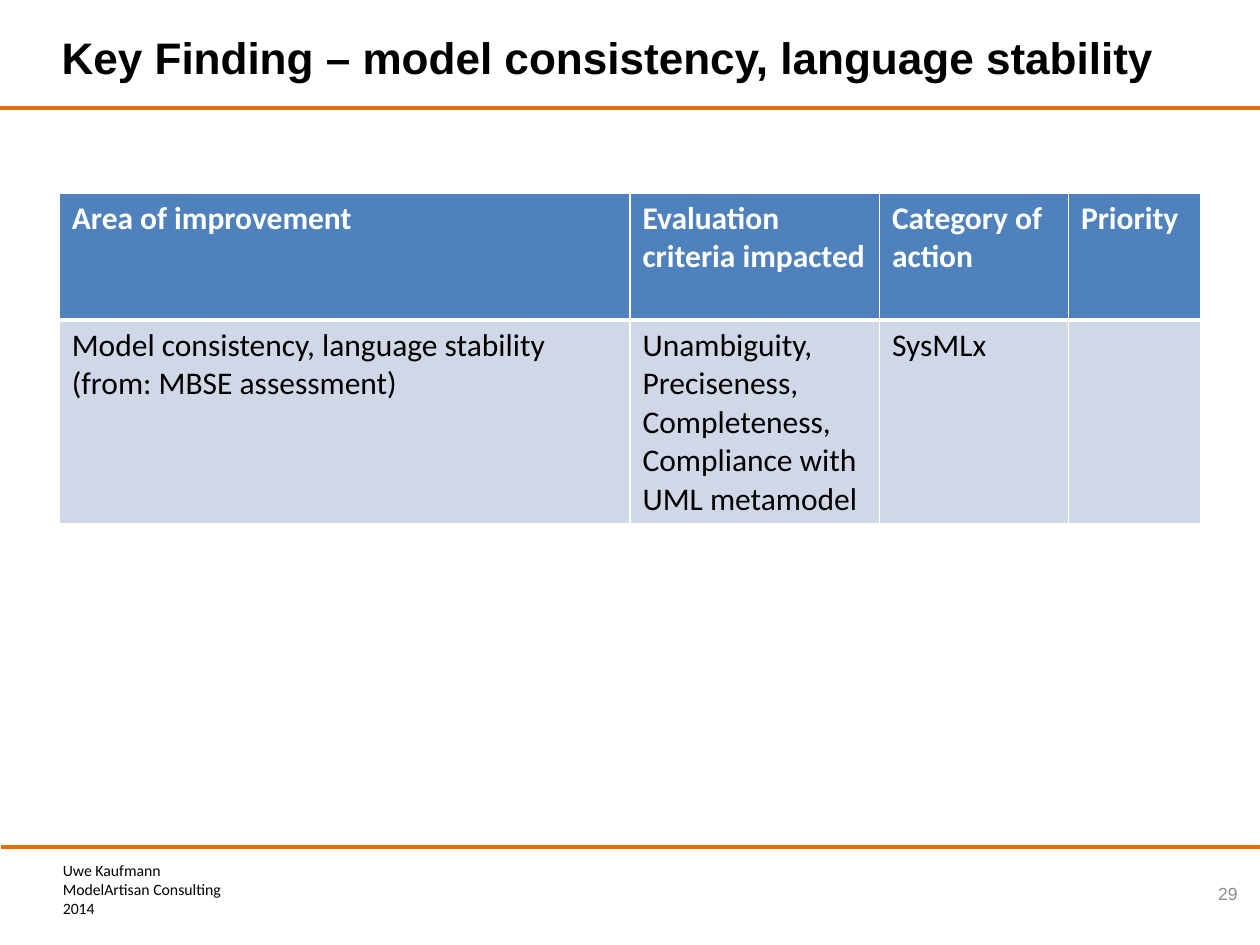
from dataclasses import dataclass

from lxml.etree import SubElement
from pptx import Presentation
from pptx.dml.color import RGBColor
from pptx.enum.shapes import MSO_CONNECTOR
from pptx.enum.text import MSO_ANCHOR, PP_ALIGN
from pptx.oxml.ns import qn
from pptx.util import Inches, Pt

# Content
TITLE = "Key Finding – model consistency, language stability"
FOOTER = ["Uwe Kaufmann", "ModelArtisan Consulting", "2014"]
PAGE_NUMBER = "29"
TABLE_ROWS = [
    ["Area of improvement", "Evaluation criteria impacted", "Category of action", "Priority"],
    [
        "Model consistency, language stability (from: MBSE assessment)",
        "Unambiguity, Preciseness, Completeness, Compliance with UML metamodel",
        "SysMLx",
        "",
    ],
]

# Layout in inches
SLIDE_WIDTH, SLIDE_HEIGHT = 10, 7.5
TABLE_LEFT, TABLE_TOP = 0.47, 1.53
COLUMN_WIDTHS = [4.53, 1.98, 1.5, 1.05]
ROW_HEIGHTS = [1.01, 1.62]
RULES = [(0, 0.86), (0.01, 6.72)]  # left end, height on the slide


@dataclass(frozen=True)
class Theme:
    heading_font: str = "Arial"
    body_font: str = "Calibri"
    title_size: float = 25.2
    table_size: float = 18
    footer_size: float = 9
    number_size: float = 10
    rule_width: float = 2.25
    black: str = "000000"
    white: str = "FFFFFF"
    grey: str = "8C8C8C"
    orange: str = "E46C0A"
    header_fill: str = "4F81BD"
    body_fill: str = "D0D8E8"


THEME = Theme()


def write_text(frame, lines, *, size, font=THEME.body_font, color=THEME.black,
               bold=False, align=PP_ALIGN.LEFT):
    for index, line in enumerate(lines):
        paragraph = frame.paragraphs[0] if index == 0 else frame.add_paragraph()
        paragraph.alignment = align
        run = paragraph.add_run()
        run.text = line
        run.font.name = font
        run.font.size = Pt(size)
        run.font.bold = bold
        run.font.color.rgb = RGBColor.from_string(color)


def add_text_box(slide, box, lines, *, wrap=True, anchor=MSO_ANCHOR.MIDDLE, **text_format):
    frame = slide.shapes.add_textbox(*map(Inches, box)).text_frame
    frame.word_wrap = wrap
    frame.vertical_anchor = anchor
    write_text(frame, lines, **text_format)


def add_rule(slide, left, top):
    connector = slide.shapes.add_connector(
        MSO_CONNECTOR.STRAIGHT, Inches(left), Inches(top), Inches(SLIDE_WIDTH), Inches(top))
    connector.line.color.rgb = RGBColor.from_string(THEME.orange)
    connector.line.width = Pt(THEME.rule_width)
    SubElement(connector.element.spPr, qn("a:effectLst"))


def set_cell_style(cell, fill, border_widths):
    cell.fill.solid()
    cell.fill.fore_color.rgb = RGBColor.from_string(fill)
    properties = cell._tc.get_or_add_tcPr()
    for index, (side, width) in enumerate(border_widths.items()):
        border = SubElement(properties, qn(f"a:ln{side}"), w=str(Pt(width)))
        SubElement(SubElement(border, qn("a:solidFill")), qn("a:srgbClr"), val=THEME.white)
        properties.insert(index, border)  # borders come before the fill


def add_findings_table(slide):
    table = slide.shapes.add_table(
        len(TABLE_ROWS), len(COLUMN_WIDTHS), Inches(TABLE_LEFT), Inches(TABLE_TOP),
        Inches(sum(COLUMN_WIDTHS)), Inches(sum(ROW_HEIGHTS))).table
    table.horz_banding = False
    for column, width in zip(table.columns, COLUMN_WIDTHS):
        column.width = Inches(width)
    for row_index, (row, height) in enumerate(zip(table.rows, ROW_HEIGHTS)):
        row.height = Inches(height)
        header = row_index == 0
        borders = {"L": 1, "R": 1, "T": 1 if header else 3, "B": 3 if header else 1}
        for cell, text in zip(row.cells, TABLE_ROWS[row_index]):
            set_cell_style(cell, THEME.header_fill if header else THEME.body_fill, borders)
            if text:
                write_text(cell.text_frame, [text], size=THEME.table_size, bold=header,
                           color=THEME.white if header else THEME.black)


def main():
    presentation = Presentation()
    presentation.slide_width = Inches(SLIDE_WIDTH)
    presentation.slide_height = Inches(SLIDE_HEIGHT)
    slide = presentation.slides.add_slide(presentation.slide_layouts[6])

    # Rules under the title and above the footer
    for left, top in RULES:
        add_rule(slide, left, top)

    # Footer, title and page number
    add_text_box(slide, (0.4, 6.78, 1.55, 0.56), FOOTER, wrap=False,
                 anchor=MSO_ANCHOR.TOP, size=THEME.footer_size)
    add_text_box(slide, (0.39, 0.06, 9, 0.78), [TITLE], size=THEME.title_size,
                 font=THEME.heading_font, bold=True)
    add_text_box(slide, (9.3, 6.89, 0.62, 0.4), [PAGE_NUMBER], size=THEME.number_size,
                 font=THEME.heading_font, color=THEME.grey, align=PP_ALIGN.RIGHT)

    add_findings_table(slide)
    presentation.save("out.pptx")


if __name__ == "__main__":
    main()
